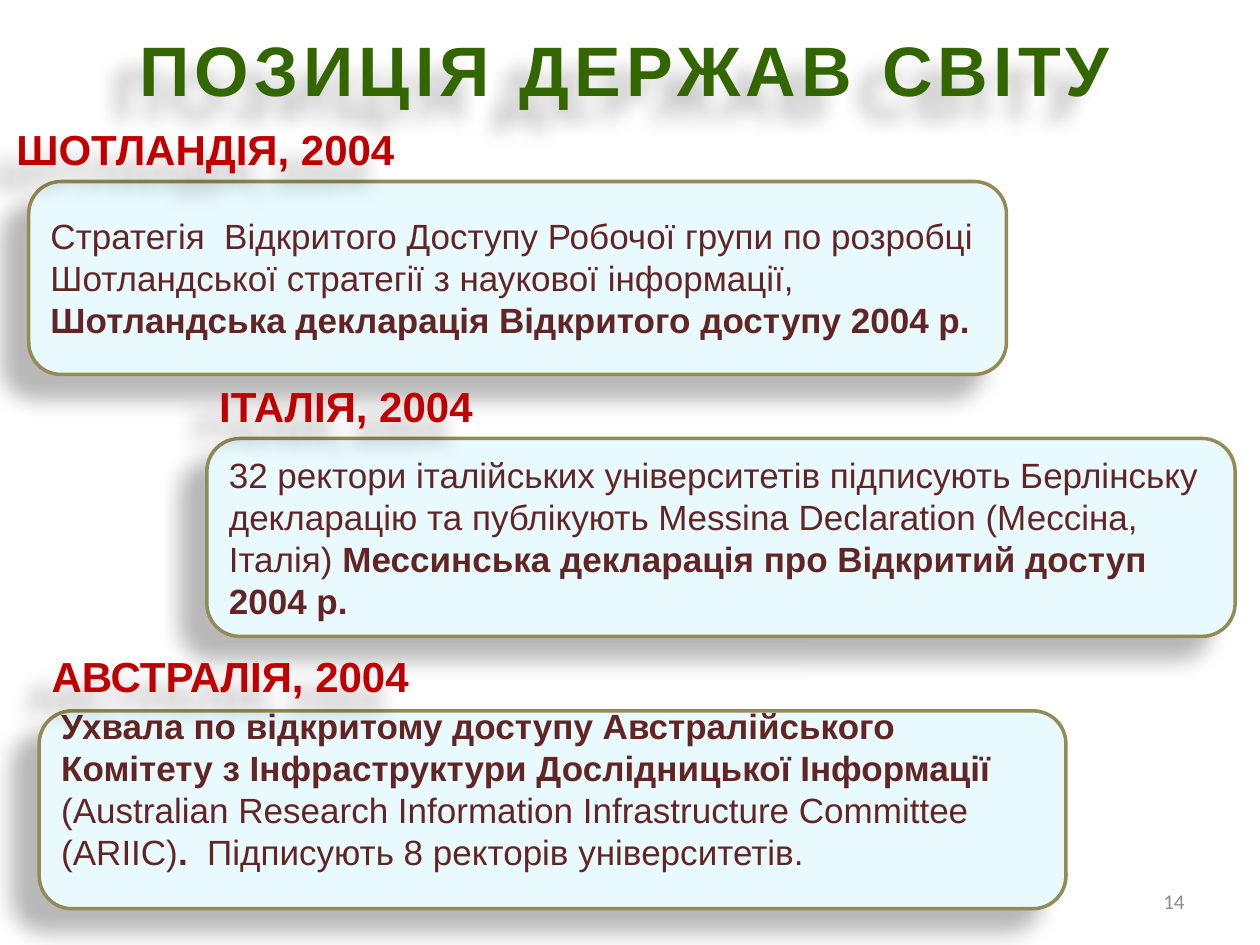
import pptx
import pptx.util
import pptx.dml.color
import pptx.enum.shapes
import pptx.enum.text
import pptx.oxml
import pptx.oxml.ns

Cm = pptx.util.Cm
Pt = pptx.util.Pt
Align = pptx.enum.text.PP_ALIGN
Mid = pptx.enum.text.MSO_ANCHOR.MIDDLE


def paint(hue):
    return pptx.dml.color.RGBColor.from_string(hue)


def shade(shape):
    shape.shadow.inherit = False
    glow = shape._element.spPr.find(pptx.oxml.ns.qn("a:effectLst"))
    glow.append(pptx.oxml.parse_xml(
        '<a:outerShdw xmlns:a="http://schemas.openxmlformats.org/drawingml/2006/main"'
        ' blurRad="149860" dist="250190" dir="8460000" algn="ctr" rotWithShape="0">'
        '<a:srgbClr val="000000"><a:alpha val="28000"/></a:srgbClr></a:outerShdw>'))


deck = pptx.Presentation()
deck.slide_width, deck.slide_height = Cm(25.4), Cm(19.05)
slide = deck.slides.add_slide(deck.slide_layouts[5])

title = slide.shapes.title
title.left, title.top, title.width, title.height = Cm(0.79), Cm(0.41), Cm(23.62), Cm(1.96)
frame = title.text_frame
frame.text = "ПОЗИЦІЯ ДЕРЖАВ СВІТУ"
frame.auto_size = pptx.enum.text.MSO_AUTO_SIZE.NONE
frame.vertical_anchor = pptx.enum.text.MSO_ANCHOR.TOP
para = frame.paragraphs[0]
para.alignment = Align.CENTER
para.font.name, para.font.size, para.font.bold = "Arial", Pt(40), True
para.font.color.rgb = paint("336600")
para.runs[0]._r.get_or_add_rPr().set("spc", "300")
shade(title)

cards = [
    ((0.58, 3.66, 19.71, 3.89), 0.13, [
        ("Стратегія  Відкритого Доступу Робочої групи по розробці "
         "Шотландської стратегії з наукової інформації, ", False),
        ("Шотландська декларація Відкритого доступу 2004 р.", True)]),
    ((4.17, 8.84, 20.73, 3.99), 0.13, [
        ("32 ректори італійських університетів підписують Берлінську "
         "декларацію та публікують Messina Declaration (Мессіна, Італія) ", False),
        ("Мессинська декларація про Відкритий доступ 2004 р.", True)]),
    ((0.79, 14.33, 20.7, 3.99), 0.97, [
        ("Ухвала по відкритому доступу Австралійського "
         "Комітету з Інфраструктури Дослідницької Інформації ", True),
        ("(Australian Research Information Infrastructure Committee (ARIIC)", False),
        (".", True),
        ("  Підписують 8 ректорів університетів.", False)]),
]
for place, foot, parts in cards:
    card = slide.shapes.add_shape(
        pptx.enum.shapes.MSO_SHAPE.ROUNDED_RECTANGLE, *map(Cm, place))
    card.fill.solid()
    card.fill.fore_color.rgb = paint("E8FAFE")
    card.line.color.rgb = paint("948A54")
    card.line.width = Pt(2)
    shade(card)
    frame = card.text_frame
    frame.word_wrap = True
    frame.vertical_anchor = Mid
    frame.margin_bottom = Cm(foot)
    para = frame.paragraphs[0]
    para.alignment = Align.LEFT
    para.font.name, para.font.size = "Arial", Pt(20)
    para.font.color.rgb = paint("632523")
    for words, bold in parts:
        run = para.add_run()
        run.text = words
        run.font.bold = bold

heads = [
    ("ШОТЛАНДІЯ, 2004", 0.08, 2.36, 8.2),
    ("ІТАЛІЯ, 2004", 4.17, 7.54, 5.66),
    ("АВСТРАЛІЯ, 2004", 0.79, 12.98, 7.8),
]
for words, left, top, width in heads:
    head = slide.shapes.add_textbox(Cm(left), Cm(top), Cm(width), Cm(1.27))
    shade(head)
    frame = head.text_frame
    frame.text = words
    frame.word_wrap = False
    para = frame.paragraphs[0]
    para.font.name, para.font.size, para.font.bold = "Arial", Pt(24), True
    para.font.color.rgb = paint("C00000")

page = slide.shapes.add_textbox(Cm(18.21), Cm(17.65), Cm(5.92), Cm(1.02))
frame = page.text_frame
frame.text = "14"
frame.word_wrap = True
frame.vertical_anchor = Mid
para = frame.paragraphs[0]
para.alignment = Align.RIGHT
para.font.name, para.font.size = "Calibri", Pt(12)
para.font.color.rgb = paint("8C8C8C")

deck.save("out.pptx")
